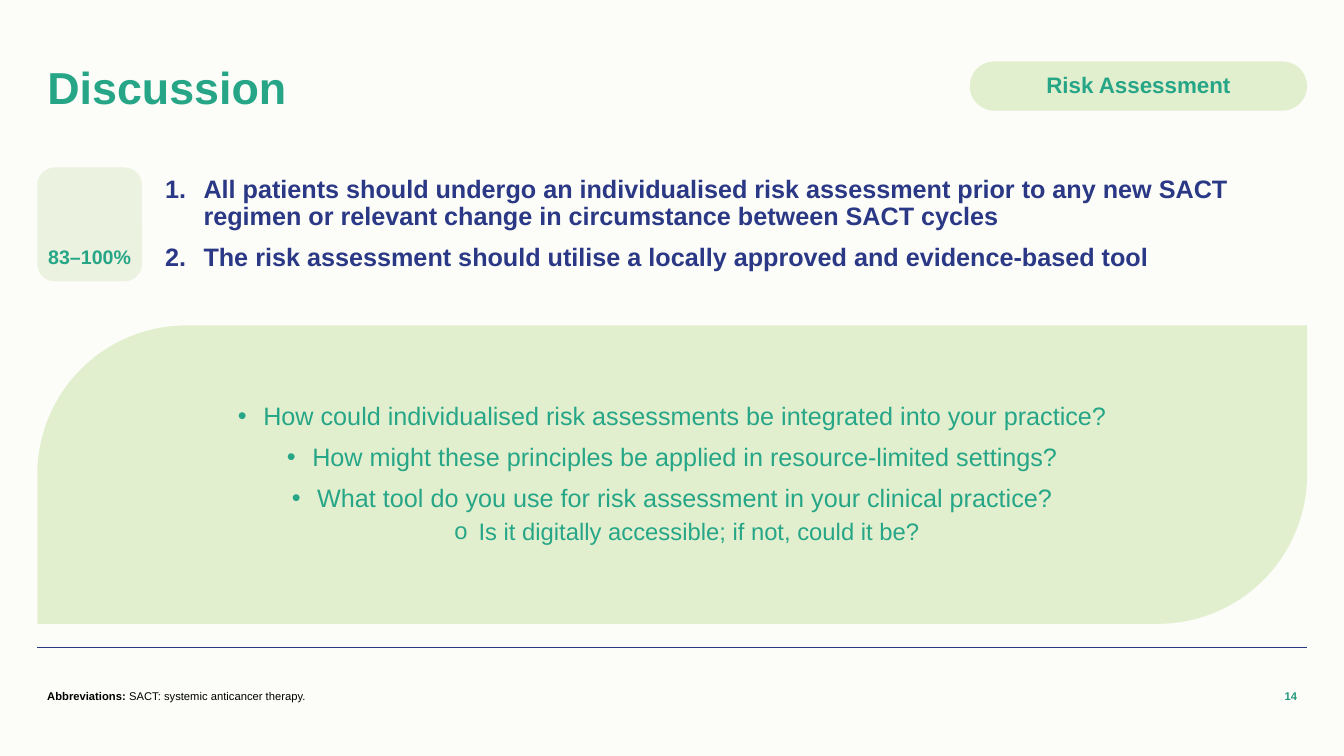
from lxml.etree import SubElement
from pptx import Presentation
from pptx.dml.color import RGBColor
from pptx.enum.shapes import MSO_CONNECTOR, MSO_SHAPE
from pptx.enum.text import MSO_ANCHOR, MSO_AUTO_SIZE, PP_ALIGN
from pptx.oxml.ns import qn
from pptx.util import Cm, Pt

# Content
TITLE = "Discussion"
SECTION = "Risk Assessment"
AGREEMENT = "83–100%"
STATEMENTS = [
    "All patients should undergo an individualised risk assessment prior to any new SACT "
    "regimen or relevant change in circumstance between SACT cycles",
    "The risk assessment should utilise a locally approved and evidence-based tool",
]
QUESTIONS = [  # level, text
    (0, "How could individualised risk assessments be integrated into your practice?"),
    (0, "How might these principles be applied in resource-limited settings?"),
    (0, "What tool do you use for risk assessment in your clinical practice?"),
    (1, "Is it digitally accessible; if not, could it be?"),
]
FOOTNOTE = ("Abbreviations: ", "SACT: systemic anticancer therapy.")
PAGE = "14"

# Style
FONT = "Arial"
GREEN, DARK_GREEN, NAVY, BLACK = "26A687", "23987C", "2A3885", "000000"
PAGE_TINT, PALE, LIGHT = "FCFDF9", "EBF2E0", "E2EFCE"
LEVELS = [  # bullet, size, indent, hanging, space before
    ("•", 18, 0.64, 0.64, 10),
    ("o", 17, 1.37, 0.61, 5),
]

# Layout in cm
MARGIN, CONTENT_WIDTH = 0.94, 32.0
RIGHT = MARGIN + CONTENT_WIDTH
PILL_WIDTH, PILL_TOP, PILL_HEIGHT = 8.5, 1.55, 1.24
STATEMENT_TOP, STATEMENT_HEIGHT = 4.22, 2.87
BADGE_WIDTH, STATEMENT_LEFT = 2.64, 3.91
PAGE_WIDTH, FOOTER_TOP, FOOTER_HEIGHT = 3.99, 17.02, 1.02
RULE_TOP = 16.31


def color(value):
    return RGBColor.from_string(value)


def add_panel(kind, box, fill, *adjustments):
    shape = slide.shapes.add_shape(kind, *map(Cm, box))
    shape.shadow.inherit = False
    shape.fill.solid()
    shape.fill.fore_color.rgb = color(fill)
    shape.line.fill.background()
    for index, value in enumerate(adjustments):
        shape.adjustments[index] = value
    return shape


def format_frame(frame, anchor=MSO_ANCHOR.MIDDLE):
    frame.word_wrap = True
    frame.auto_size = MSO_AUTO_SIZE.NONE
    frame.vertical_anchor = anchor


def add_text(box, text="", anchor=MSO_ANCHOR.MIDDLE):
    frame = slide.shapes.add_textbox(*map(Cm, box)).text_frame
    format_frame(frame, anchor)
    frame.text = text
    return frame


def style(paragraph, size, font_color, bold=True, align=PP_ALIGN.LEFT):
    paragraph.alignment = align
    for run in paragraph.runs:
        run.font.name = FONT
        run.font.size = Pt(size)
        run.font.bold = bold
        run.font.color.rgb = color(font_color)


def space(paragraph, before):
    paragraph.line_spacing = 0.9
    paragraph.space_before = Pt(before)


def add_bullet(paragraph, indent, hanging, tag, **attributes):
    properties = paragraph._p.get_or_add_pPr()
    properties.set("marL", str(Cm(indent)))
    properties.set("indent", str(-Cm(hanging)))
    SubElement(properties, qn("a:buFont"), typeface=FONT)
    SubElement(properties, qn(tag), **attributes)


presentation = Presentation()
presentation.slide_width, presentation.slide_height = Cm(33.87), Cm(19.05)
slide = presentation.slides.add_slide(presentation.slide_layouts[5])
slide.background.fill.solid()
slide.background.fill.fore_color.rgb = color(PAGE_TINT)

# Title
title = slide.shapes.title
title.left, title.top, title.width, title.height = map(Cm, (MARGIN, 1.02, 22.02, 2.49))
format_frame(title.text_frame)
title.text_frame.text = TITLE
title.text_frame.paragraphs[0].line_spacing = 0.9
style(title.text_frame.paragraphs[0], 32, GREEN)

# Section pill
pill = add_panel(MSO_SHAPE.ROUNDED_RECTANGLE,
                 (RIGHT - PILL_WIDTH, PILL_TOP, PILL_WIDTH, PILL_HEIGHT), LIGHT, 0.5)
format_frame(pill.text_frame)
pill.text_frame.text = SECTION
space(pill.text_frame.paragraphs[0], 10)
style(pill.text_frame.paragraphs[0], 16, GREEN, align=PP_ALIGN.CENTER)

# Agreement badge
add_panel(MSO_SHAPE.ROUNDED_RECTANGLE,
          (MARGIN, STATEMENT_TOP, BADGE_WIDTH, STATEMENT_HEIGHT), PALE)
agreement = add_text((MARGIN, 6.05, BADGE_WIDTH, 0.86), AGREEMENT, MSO_ANCHOR.TOP)
style(agreement.paragraphs[0], 14, GREEN, align=PP_ALIGN.CENTER)

# Numbered statements
statements = add_text((STATEMENT_LEFT, STATEMENT_TOP, RIGHT - STATEMENT_LEFT, STATEMENT_HEIGHT),
                      "\n".join(STATEMENTS))
for paragraph in statements.paragraphs:
    space(paragraph, 10)
    style(paragraph, 18, NAVY)
    add_bullet(paragraph, 0.97, 0.97, "a:buAutoNum", type="arabicPeriod")

# Discussion questions
panel = add_panel(MSO_SHAPE.ROUND_2_DIAG_RECTANGLE,
                  (MARGIN, 8.2, CONTENT_WIDTH, 7.52), LIGHT, 0.5, 0)
format_frame(panel.text_frame)
panel.text_frame.text = "\n".join(text for _, text in QUESTIONS)
for paragraph, (level, _) in zip(panel.text_frame.paragraphs, QUESTIONS):
    bullet, size, indent, hanging, before = LEVELS[level]
    paragraph.level = level
    space(paragraph, before)
    style(paragraph, size, GREEN, bold=False, align=PP_ALIGN.CENTER)
    add_bullet(paragraph, indent, hanging, "a:buChar", char=bullet)

# Footer
rule = slide.shapes.add_connector(MSO_CONNECTOR.STRAIGHT, Cm(MARGIN), Cm(RULE_TOP),
                                  Cm(RIGHT), Cm(RULE_TOP))
rule.line.color.rgb = color(NAVY)
rule.line.width = Pt(1)
SubElement(rule._element.spPr, qn("a:effectLst"))

footnote = add_text((MARGIN, FOOTER_TOP, 27.13, FOOTER_HEIGHT)).paragraphs[0]
for part in FOOTNOTE:
    footnote.add_run().text = part
style(footnote, 8, BLACK)
footnote.runs[1].font.bold = False

page = add_text((RIGHT - PAGE_WIDTH, FOOTER_TOP, PAGE_WIDTH, FOOTER_HEIGHT), PAGE)
style(page.paragraphs[0], 8, DARK_GREEN, align=PP_ALIGN.RIGHT)

presentation.save("out.pptx")
